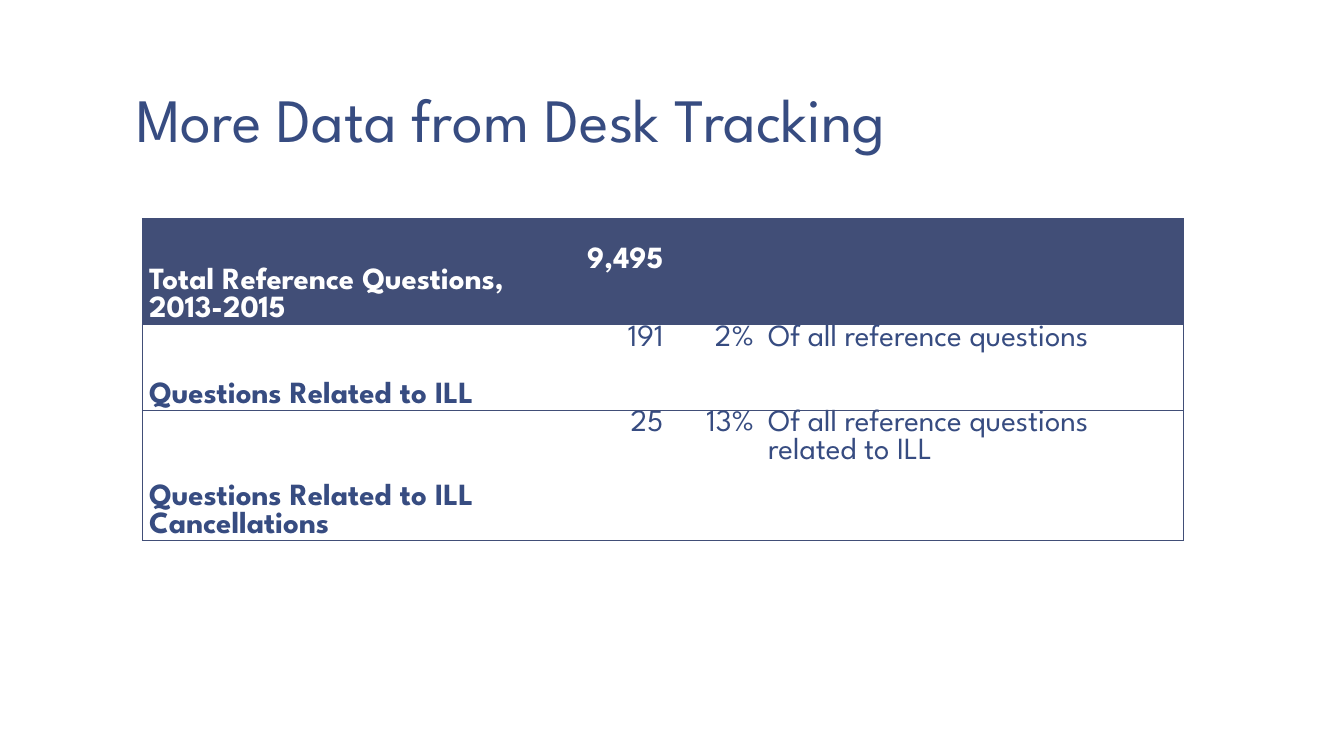
from dataclasses import dataclass

from lxml import etree
from pptx import Presentation
from pptx import util as u
from pptx.dml.color import RGBColor
from pptx.enum import text
from pptx.oxml.ns import qn

EMU_PER_PX = 9144  # 100 px to the inch


@dataclass(frozen=True)
class Theme:
    font: str = "League Spartan"
    ink: str = "374C81"
    band: str = "414E77"
    paper: str = "FFFFFF"
    title_pt: int = 44
    table_pt: int = 22
    border_pt: float = 0.5


@dataclass(frozen=True)
class Row:
    height: int
    label: str
    count: str
    share: str = ""
    basis: str = ""
    header: bool = False
    count_drop: int = 0


THEME = Theme()
COLUMNS = (417, 107, 90, 419)
ROWS = (
    Row(105, "Total Reference Questions, 2013-2015", "9,495", header=True, count_drop=28),
    Row(85, "Questions Related to ILL", "191", "2%", "Of all reference questions"),
    Row(129, "Questions Related to ILL Cancellations", "25", "13%",
        "Of all reference questions related to ILL"),
)


def px(n: int) -> u.Emu:
    return u.Emu(n * EMU_PER_PX)


def add_run(p, words: str, size: int, color: str, bold: bool = False) -> None:
    r = p.add_run()
    r.text = words
    r.font.name = THEME.font
    r.font.size = u.Pt(size)
    r.font.bold = bold
    r.font.color.rgb = RGBColor.from_string(color)


def set_borders(cell, visible: str) -> None:
    """Rule the sides named in visible (letters of LRTB) and clear the others."""
    tc_pr = cell._tc.get_or_add_tcPr()
    for i, side in enumerate("LRTB"):
        ln = etree.Element(qn(f"a:ln{side}"), w=str(u.Pt(THEME.border_pt)))
        if side in visible:
            fill = etree.SubElement(ln, qn("a:solidFill"))
            etree.SubElement(fill, qn("a:srgbClr"), val=THEME.band)
        else:
            etree.SubElement(ln, qn("a:noFill"))
        tc_pr.insert(i, ln)


def fill_cell(cell, words: str, column: int, row: Row) -> None:
    is_label = column == 0
    is_number = column in (1, 2)
    cell.margin_left = cell.margin_right = px(7)
    cell.margin_top = px(row.count_drop if column == 1 else 0)
    cell.margin_bottom = 0
    cell.vertical_anchor = text.MSO_ANCHOR.BOTTOM if is_label else text.MSO_ANCHOR.TOP
    if row.header:
        cell.fill.solid()
        cell.fill.fore_color.rgb = RGBColor.from_string(THEME.band)
    else:
        cell.fill.background()
    set_borders(cell, "TB" + {0: "L", len(COLUMNS) - 1: "R"}.get(column, ""))
    p = cell.text_frame.paragraphs[0]
    p.alignment = text.PP_ALIGN.RIGHT if is_number else text.PP_ALIGN.LEFT
    if words:
        color = THEME.paper if row.header else THEME.ink
        add_run(p, words, THEME.table_pt, color, bold=is_label or row.header)


def add_title(s, words: str) -> None:
    tf = s.shapes.add_textbox(px(122), px(8), px(1111), px(153)).text_frame
    tf.word_wrap = True
    tf.vertical_anchor = text.MSO_ANCHOR.BOTTOM
    tf.margin_left = tf.margin_right = px(13)
    tf.margin_top = tf.margin_bottom = px(7)
    p = tf.paragraphs[0]
    p.line_spacing = 0.85
    add_run(p, words, THEME.title_pt, THEME.ink)


def add_question_table(s) -> None:
    height = sum(row.height for row in ROWS)
    table = s.shapes.add_table(len(ROWS), len(COLUMNS), px(141), px(217),
                               px(sum(COLUMNS)), px(height)).table
    table.first_row = table.horz_banding = False
    for column, width in zip(table.columns, COLUMNS):
        column.width = px(width)
    for i, row in enumerate(ROWS):
        table.rows[i].height = px(row.height)
        for j, words in enumerate((row.label, row.count, row.share, row.basis)):
            fill_cell(table.cell(i, j), words, j, row)


def main() -> None:
    prs = Presentation()
    prs.slide_width, prs.slide_height = px(1333), px(750)
    s = prs.slides.add_slide(prs.slide_layouts[6])
    s.background.fill.solid()
    s.background.fill.fore_color.rgb = RGBColor.from_string(THEME.paper)
    add_title(s, "More Data from Desk Tracking")
    add_question_table(s)
    prs.save("out.pptx")


if __name__ == "__main__":
    main()
